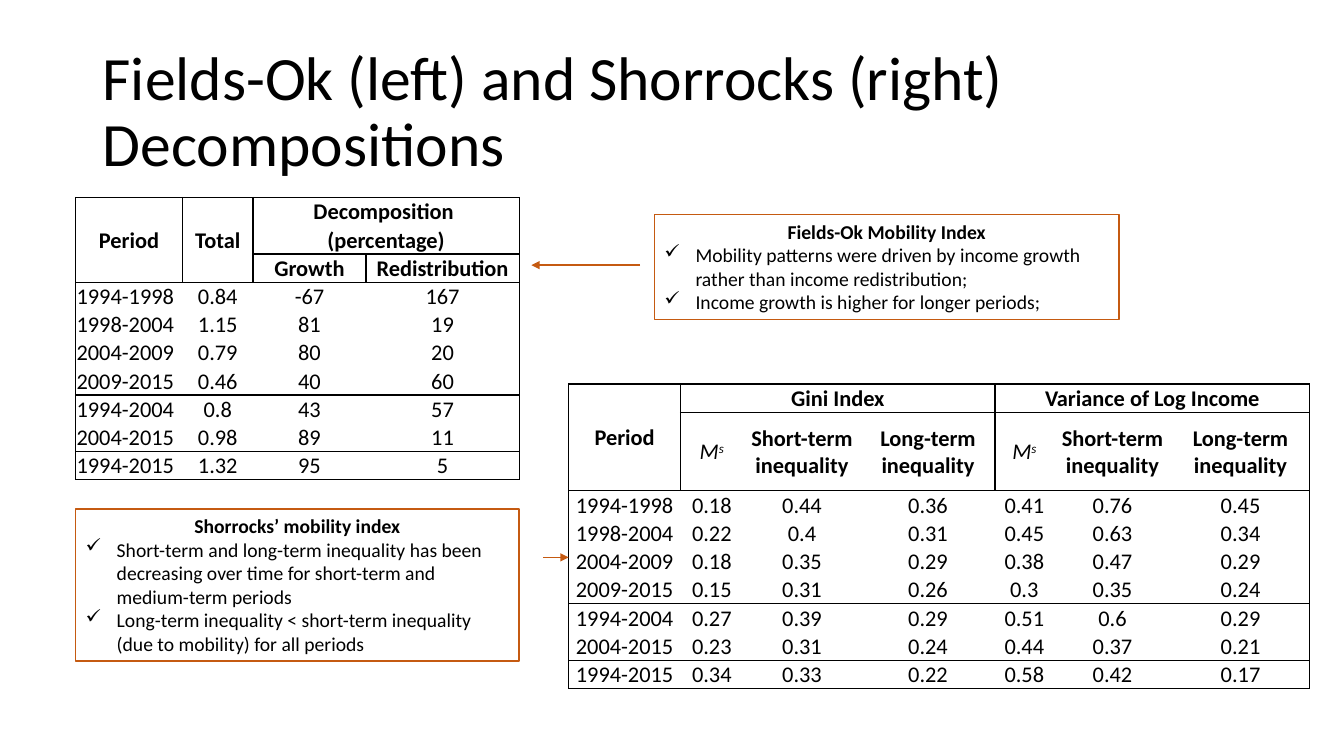
from dataclasses import dataclass

from lxml import etree
from pptx import Presentation
from pptx.dml.color import RGBColor
from pptx.enum.shapes import MSO_CONNECTOR, MSO_SHAPE
from pptx.enum.text import MSO_ANCHOR, MSO_AUTO_SIZE, PP_ALIGN
from pptx.oxml.ns import qn
from pptx.slide import Slide
from pptx.table import _Cell
from pptx.text.text import _Paragraph
from pptx.util import Inches, Pt

RECTANGLE = MSO_SHAPE.RECTANGLE
STRAIGHT = MSO_CONNECTOR.STRAIGHT
TOP = MSO_ANCHOR.TOP
MIDDLE = MSO_ANCHOR.MIDDLE
LEFT = PP_ALIGN.LEFT
CENTER = PP_ALIGN.CENTER
FIT_SHAPE = MSO_AUTO_SIZE.SHAPE_TO_FIT_TEXT

FONT = "Calibri"
BLACK = "000000"
ORANGE = "C55A11"
PERIODS = ["1994-1998", "1998-2004", "2004-2009", "2009-2015",
           "1994-2004", "2004-2015", "1994-2015"]


@dataclass
class Box:
    top: int
    left: int
    bottom: int
    right: int


@dataclass
class ResultTable:
    left: float
    top: float
    widths: list[float]
    heights: list[float]
    header: list[list[str]]
    values: list[str]
    merges: list[Box]
    boxes: list[Box]
    period_alignment: PP_ALIGN


@dataclass
class Note:
    left: float
    top: float
    width: float
    height: float
    heading: str
    points: list[str]


@dataclass
class Arrow:
    start: float
    end: float
    y: float


ROW = 0.28
TABLES = [
    ResultTable(
        0.75, 1.96, [1.06, 0.7, 1.12, 1.52], [ROW] * 10,
        [["Period", "Total", "Decomposition ", ""],
         ["", "", "(percentage)", ""],
         ["", "", "Growth", "Redistribution"]],
        ["0.84 -67 167", "1.15 81 19", "0.79 80 20", "0.46 40 60",
         "0.8 43 57", "0.98 89 11", "1.32 95 5"],
        [Box(0, 0, 2, 0), Box(0, 1, 2, 1), Box(0, 2, 0, 3), Box(1, 2, 1, 3)],
        [Box(0, 0, 2, 0), Box(0, 1, 2, 1), Box(0, 2, 1, 3), Box(2, 2, 2, 2),
         Box(2, 3, 2, 3), Box(3, 0, 6, 3), Box(7, 0, 8, 3), Box(9, 0, 9, 3)],
        LEFT,
    ),
    ResultTable(
        5.64, 3.81, [1.11, 0.62, 1.17, 1.33, 0.58, 1.17, 1.37],
        [ROW, 0.78] + [ROW] * 7,
        [["Period", "Gini Index", "", "", "Variance of Log Income", "", ""],
         [""] + ["Ms", "Short-term inequality", "Long-term inequality"] * 2],
        ["0.18 0.44 0.36 0.41 0.76 0.45", "0.22 0.4 0.31 0.45 0.63 0.34",
         "0.18 0.35 0.29 0.38 0.47 0.29", "0.15 0.31 0.26 0.3 0.35 0.24",
         "0.27 0.39 0.29 0.51 0.6 0.29", "0.23 0.31 0.24 0.44 0.37 0.21",
         "0.34 0.33 0.22 0.58 0.42 0.17"],
        [Box(0, 0, 1, 0), Box(0, 1, 0, 3), Box(0, 4, 0, 6)],
        [Box(0, 0, 1, 0), Box(0, 1, 0, 3), Box(0, 4, 0, 6), Box(1, 1, 1, 3),
         Box(1, 4, 1, 6), Box(2, 0, 5, 6), Box(6, 0, 7, 6), Box(8, 0, 8, 6)],
        CENTER,
    ),
]
NOTES = [
    Note(6.49, 2.13, 4.61, 1.04, "Fields-Ok Mobility Index",
         ["Mobility patterns were driven by income growth rather than income redistribution;",
          "Income growth is higher for longer periods;"]),
    Note(0.75, 5.05, 4.4, 1.51, "Shorrocks’ mobility index",
         ["Short-term and long-term inequality has been decreasing over time "
          "for short-term and medium-term periods",
          "Long-term inequality < short-term inequality (due to mobility) for all periods"]),
]
ARROWS = [Arrow(6.35, 5.27, 2.63), Arrow(5.39, 5.64, 5.53)]


def color(value: str) -> RGBColor:
    return RGBColor.from_string(value)


def format_runs(paragraph: _Paragraph, size: float, bold: bool = False) -> None:
    for run in paragraph.runs:
        run.font.name = FONT
        run.font.size = Pt(size)
        run.font.bold = bold
        run.font.color.rgb = color(BLACK)


def add_title(slide: Slide) -> None:
    title = slide.shapes.add_textbox(Inches(0.92), Inches(0.4), Inches(11.5), Inches(1.45))
    frame = title.text_frame
    frame.word_wrap = True
    frame.vertical_anchor = MIDDLE
    frame.text = "Fields-Ok (left) and Shorrocks (right) Decompositions"
    frame.paragraphs[0].line_spacing = 0.9
    format_runs(frame.paragraphs[0], 44)


def set_borders(cell: _Cell, row: int, column: int, boxes: list[Box]) -> None:
    box = next(box for box in boxes
               if box.top <= row <= box.bottom and box.left <= column <= box.right)
    sides = {
        "a:lnL": column == box.left,
        "a:lnR": column + cell.span_width - 1 == box.right,
        "a:lnT": row == box.top,
        "a:lnB": row + cell.span_height - 1 == box.bottom,
    }
    properties = cell._tc.get_or_add_tcPr()
    for tag, visible in sides.items():
        line = etree.SubElement(properties, qn(tag), w=str(Pt(1)))
        if visible:
            fill = etree.SubElement(line, qn("a:solidFill"))
            etree.SubElement(fill, qn("a:srgbClr"), val=BLACK)
        else:
            etree.SubElement(line, qn("a:noFill"))


def fill_cell(cell: _Cell, text: str, bold: bool, alignment: PP_ALIGN) -> None:
    cell.margin_left = cell.margin_right = cell.margin_top = Inches(0.01)
    cell.margin_bottom = 0
    cell.vertical_anchor = MIDDLE
    cell.fill.background()
    paragraph = cell.text_frame.paragraphs[0]
    paragraph.alignment = alignment
    if text == "Ms":
        for letter in text:
            paragraph.add_run().text = letter
        format_runs(paragraph, 16)
        for run in paragraph.runs:
            run.font.italic = True
        paragraph.runs[1]._r.get_or_add_rPr().set("baseline", "30000")
    elif text:
        paragraph.text = text
        format_runs(paragraph, 16, bold)


def add_result_table(slide: Slide, result: ResultTable) -> None:
    rows = result.header + [[period, *values.split()]
                            for period, values in zip(PERIODS, result.values)]
    table = slide.shapes.add_table(
        len(rows), len(result.widths), Inches(result.left), Inches(result.top),
        Inches(sum(result.widths)), Inches(sum(result.heights))).table
    table.first_row = table.horz_banding = False
    for column, width in zip(table.columns, result.widths):
        column.width = Inches(width)
    for row, height in zip(table.rows, result.heights):
        row.height = Inches(height)
    for merge in result.merges:
        table.cell(merge.top, merge.left).merge(table.cell(merge.bottom, merge.right))
    for row_index, texts in enumerate(rows):
        is_header = row_index < len(result.header)
        for column_index, text in enumerate(texts):
            cell = table.cell(row_index, column_index)
            is_period = column_index == 0 and not is_header
            set_borders(cell, row_index, column_index, result.boxes)
            fill_cell(cell, text, is_header, result.period_alignment if is_period else CENTER)


def add_note(slide: Slide, note: Note) -> None:
    shape = slide.shapes.add_shape(RECTANGLE, Inches(note.left), Inches(note.top),
                                   Inches(note.width), Inches(note.height))
    shape.shadow.inherit = False
    shape.fill.background()
    shape.line.color.rgb = color(ORANGE)
    shape.line.width = Pt(1)
    frame = shape.text_frame
    frame.word_wrap = True
    frame.auto_size = FIT_SHAPE
    frame.vertical_anchor = TOP
    frame.text = "\n".join([note.heading, *note.points])
    heading, *points = frame.paragraphs
    heading.alignment = CENTER
    format_runs(heading, 14, True)
    for point in points:
        point.alignment = LEFT
        format_runs(point, 14)
        properties = point._p.get_or_add_pPr()
        properties.set("marL", str(Inches(0.31)))
        properties.set("indent", str(-Inches(0.31)))
        etree.SubElement(properties, qn("a:buChar"), char="✓")


def add_arrow(slide: Slide, arrow: Arrow) -> None:
    connector = slide.shapes.add_connector(STRAIGHT, Inches(arrow.start), Inches(arrow.y),
                                           Inches(arrow.end), Inches(arrow.y))
    connector.line.color.rgb = color(ORANGE)
    connector.line.width = Pt(1)
    etree.SubElement(connector.line._get_or_add_ln(), qn("a:tailEnd"), type="triangle")
    etree.SubElement(connector._element.spPr, qn("a:effectLst"))


def main() -> None:
    presentation = Presentation()
    presentation.slide_width = Inches(13.33)
    presentation.slide_height = Inches(7.5)
    slide = presentation.slides.add_slide(presentation.slide_layouts[6])
    add_title(slide)
    for result in TABLES:
        add_result_table(slide, result)
    for note in NOTES:
        add_note(slide, note)
    for arrow in ARROWS:
        add_arrow(slide, arrow)
    presentation.save("out.pptx")


if __name__ == "__main__":
    main()
